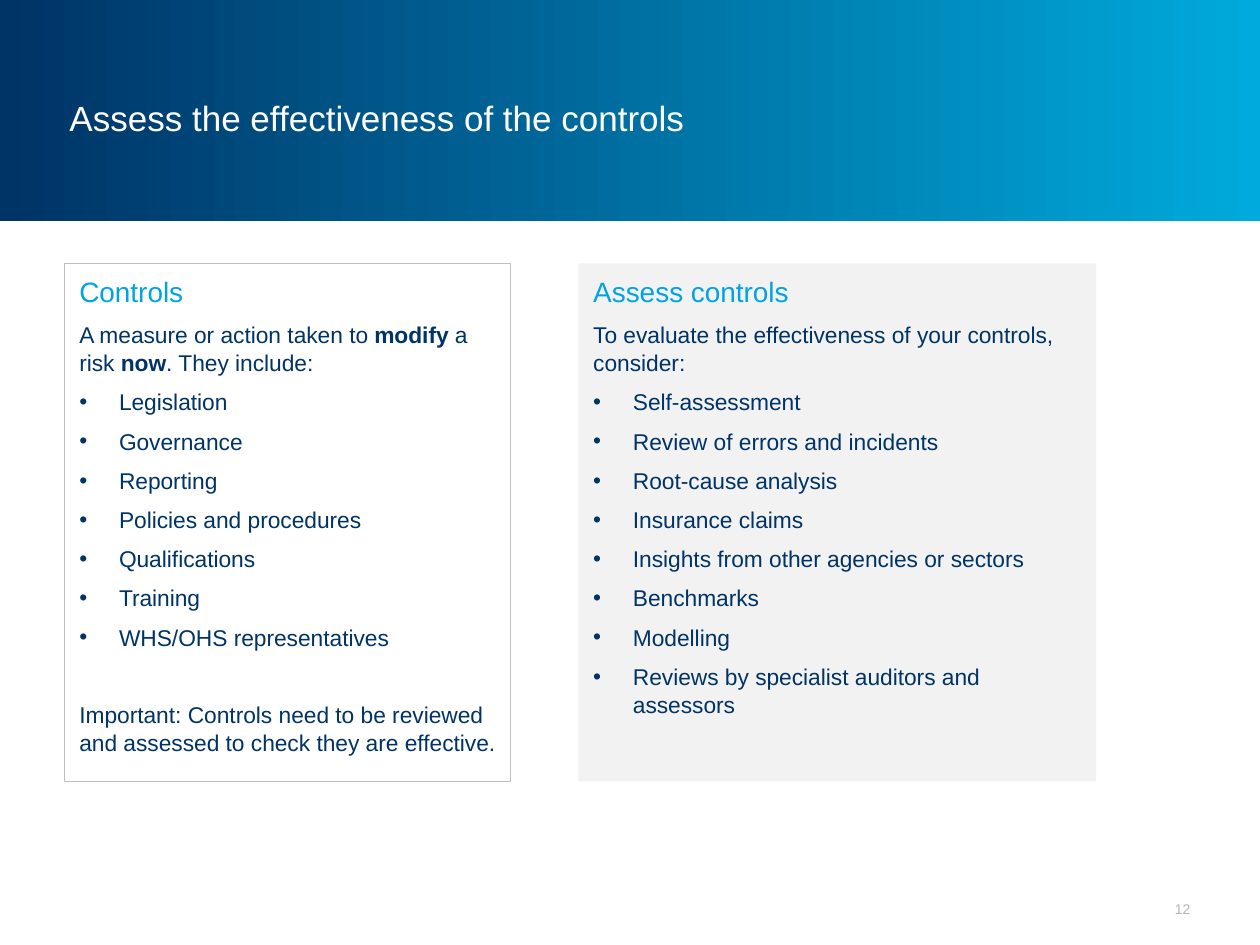
from dataclasses import dataclass

from lxml.etree import SubElement
from pptx import Presentation
from pptx.dml.color import RGBColor
from pptx.enum.shapes import MSO_SHAPE
from pptx.enum.text import MSO_ANCHOR, PP_ALIGN
from pptx.oxml.ns import qn
from pptx.util import Cm, Pt


@dataclass(frozen=True)
class Theme:
    font: str = "Arial"
    navy: str = "003366"
    sky: str = "00AADC"
    heading: str = "00A4E4"
    white: str = "FFFFFF"
    panel: str = "F2F2F2"
    border: str = "BFBFBF"
    number: str = "B4B4B4"
    title_size: float = 20
    heading_size: float = 16
    body_size: float = 13
    number_size: float = 8


THEME = Theme()
TITLE = "Assess the effectiveness of the controls"
PAGE_NUMBER = "12"
PANELS = [
    {
        "left": 11.66, "width": 10.44, "fill": THEME.panel, "line": None,
        "heading": "Assess controls",
        "intro": [("To evaluate the effectiveness of your controls, consider:", False)],
        "bullets": [
            "Self-assessment",
            "Review of errors and incidents",
            "Root-cause analysis",
            "Insurance claims",
            "Insights from other agencies or sectors",
            "Benchmarks",
            "Modelling",
            "Reviews by specialist auditors and assessors",
        ],
        "closing": None,
    },
    {
        "left": 1.3, "width": 8.99, "fill": None, "line": THEME.border,
        "heading": "Controls",
        "intro": [
            ("A measure or action taken to ", False),
            ("modify", True),
            (" a risk ", False),
            ("now", True),
            (". They include:", False),
        ],
        "bullets": [
            "Legislation",
            "Governance",
            "Reporting",
            "Policies and procedures",
            "Qualifications",
            "Training",
            "WHS/OHS representatives",
        ],
        "closing": "Important: Controls need to be reviewed and assessed "
                   "to check they are effective.",
    },
]
PANEL_TOP, PANEL_HEIGHT = 5.31, 10.44
HANGING_INDENT = 0.8


def rgb(value):
    return RGBColor.from_string(value)


def style(para, size, color):
    para.font.name = THEME.font
    para.font.size = Pt(size)
    para.font.color.rgb = rgb(color)


def set_frame(frame, anchor, inset_x, inset_y):
    frame.word_wrap = True
    frame.vertical_anchor = anchor
    frame.margin_left = frame.margin_right = Cm(inset_x)
    frame.margin_top = frame.margin_bottom = Cm(inset_y)


def add_rectangle(page, left, top, width, height):
    box = page.shapes.add_shape(
        MSO_SHAPE.RECTANGLE, Cm(left), Cm(top), Cm(width), Cm(height))
    box.shadow.inherit = False
    return box


def add_banner(page):
    banner = add_rectangle(page, 0, 0, 25.4, 4.46)
    banner.line.fill.background()
    banner.fill.gradient()
    banner.fill.gradient_angle = 0
    for stop, color in zip(banner.fill.gradient_stops, (THEME.navy, THEME.sky)):
        stop.color.rgb = rgb(color)


def add_label(page, text, place, size, color, align):
    box = page.shapes.add_textbox(*(Cm(length) for length in place))
    set_frame(box.text_frame, MSO_ANCHOR.MIDDLE, 0.1, 0.1)
    para = box.text_frame.paragraphs[0]
    para.text = text
    para.alignment = align
    style(para, size, color)


def add_bullet(para):
    properties = para._p.get_or_add_pPr()
    properties.set("marL", str(Cm(HANGING_INDENT)))
    properties.set("indent", str(-Cm(HANGING_INDENT)))
    color = SubElement(properties, qn("a:buClr"))
    SubElement(color, qn("a:srgbClr"), val=THEME.navy)
    SubElement(properties, qn("a:buFont"), typeface=THEME.font)
    SubElement(properties, qn("a:buChar"), char="•")


def add_para(frame, spans, size, color, bullet=False, before=None):
    para = frame.add_paragraph() if frame.text else frame.paragraphs[0]
    if bullet:
        add_bullet(para)
    para.alignment = PP_ALIGN.LEFT
    para.line_spacing = 1.05
    para.space_after = Pt(6)
    if before:
        para.space_before = Pt(before)
    style(para, size, color)
    for text, bold in spans:
        span = para.add_run()
        span.text = text
        if bold:
            span.font.bold = True


def add_panel(page, panel):
    box = add_rectangle(page, panel["left"], PANEL_TOP, panel["width"], PANEL_HEIGHT)
    if panel["fill"]:
        box.fill.solid()
        box.fill.fore_color.rgb = rgb(panel["fill"])
    else:
        box.fill.background()
    if panel["line"]:
        box.line.color.rgb = rgb(panel["line"])
        box.line.width = Pt(0.75)
    else:
        box.line.fill.background()
    frame = box.text_frame
    set_frame(frame, MSO_ANCHOR.TOP, 0.3, 0.2)
    body = (THEME.body_size, THEME.navy)
    add_para(frame, [(panel["heading"], False)], THEME.heading_size, THEME.heading)
    add_para(frame, panel["intro"], *body)
    for text in panel["bullets"]:
        add_para(frame, [(text, False)], *body, bullet=True)
    if panel["closing"]:
        add_para(frame, [(panel["closing"], False)], *body, before=21.7)


def main():
    deck = Presentation()
    deck.slide_width, deck.slide_height = Cm(25.4), Cm(19.05)
    page = deck.slides.add_slide(deck.slide_layouts[6])
    add_banner(page)
    add_label(page, PAGE_NUMBER, (22.1, 18.01, 2, 0.61),
              THEME.number_size, THEME.number, PP_ALIGN.RIGHT)
    for panel in PANELS:
        add_panel(page, panel)
    add_label(page, TITLE, (1.3, 0.76, 19, 3.2),
              THEME.title_size, THEME.white, PP_ALIGN.LEFT)
    deck.save("out.pptx")


if __name__ == "__main__":
    main()
